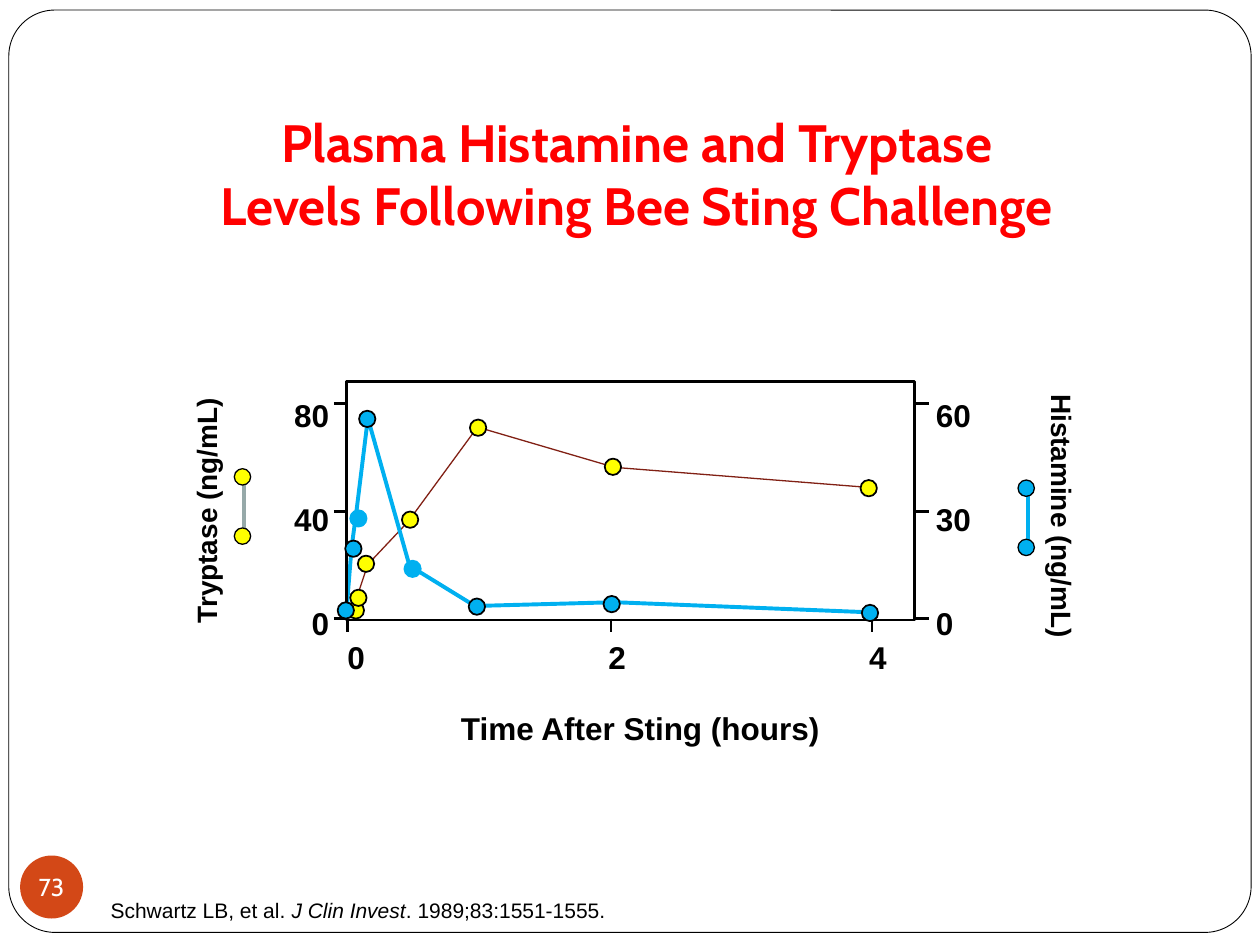
from lxml.etree import SubElement
from pptx import Presentation
from pptx.dml.color import RGBColor
from pptx.enum.shapes import MSO_CONNECTOR, MSO_SHAPE
from pptx.enum.text import MSO_ANCHOR, MSO_AUTO_SIZE, PP_ALIGN
from pptx.oxml.ns import qn
from pptx.util import Emu, Pt

PX = 9144
DOT = 13
TAB = 69
COLORS = {
    "white": "FFFFFF", "black": "000000", "title": "FF0000", "badge": "D34817",
    "tryptase": "FFFF00", "tryptase_line": "812014", "tryptase_key": "96A9A9",
    "histamine": "00B0F0",
}
TRYPTASE_LINE = [(6, 183), (8, 172), (17, 145), (49, 111), (104, 36), (213, 68), (416, 84)]
TRYPTASE_DOTS = [(1, 175), (3, 165), (9, 138), (44, 103), (98, 30), (205, 61), (408, 78)]
HISTAMINE_LINE = [(0, 182), (4, 132), (8, 102), (17, 29), (50, 146), (102, 178), (213, 175), (415, 183)]
HISTAMINE_DOTS = [(-7, 175), (-1, 126), (10, 23), (97, 172), (204, 170), (409, 177)]
HISTAMINE_PLAIN_DOTS = [(3, 102), (46, 142)]


def px(*lengths):
    """Turn whole px lengths into EMU."""
    return [Emu(length * PX) for length in lengths]


def rgb(name):
    """Look up a named colour."""
    return RGBColor.from_string(COLORS[name])


def style_shape(shape, fill=None, line=None, width=1):
    """Set fill and line, and drop the shadow."""
    shape.shadow.inherit = False
    if fill:
        shape.fill.solid()
        shape.fill.fore_color.rgb = rgb(fill)
    else:
        shape.fill.background()
    if line:
        shape.line.color.rgb = rgb(line)
        shape.line.width = Pt(width)
    else:
        shape.line.fill.background()


def add_figure(slide, preset, box, fill=None, line=None, width=1):
    """Add a styled preset shape."""
    shape = slide.shapes.add_shape(preset, *px(*box))
    style_shape(shape, fill, line, width)
    return shape


def add_dots(slide, left, top, places, fill, line="black", width=1):
    """Add round markers at places relative to a corner."""
    for x, y in places:
        add_figure(slide, MSO_SHAPE.OVAL, (left + x, top + y, DOT, DOT), fill, line, width)


def add_line(slide, start, end, color="black", width=1.5):
    """Add a straight line without a shadow."""
    connector = slide.shapes.add_connector(MSO_CONNECTOR.STRAIGHT, *px(*start, *end))
    connector.line.color.rgb = rgb(color)
    connector.line.width = Pt(width)
    SubElement(connector._element.spPr, qn("a:effectLst"))


def add_curve(slide, left, top, points, color, width):
    """Add an open line through points relative to a corner."""
    start, *rest = [(left + x, top + y) for x, y in points]
    builder = slide.shapes.build_freeform(*start, scale=PX)
    builder.add_line_segments(rest, close=False)
    style_shape(builder.convert_to_shape(), None, color, width)


def format_text(frame, size, font="Arial", color="black", bold=False, align=PP_ALIGN.LEFT, spacing=None):
    """Format every paragraph and run of a text frame."""
    for paragraph in frame.paragraphs:
        paragraph.alignment = align
        if spacing:
            paragraph.line_spacing = spacing
        for run in paragraph.runs:
            run.font.size, run.font.name, run.font.bold = Pt(size), font, bold
            run.font.color.rgb = rgb(color)


def add_text(slide, box, text, size, wrap=True, grow=True, rotation=0, bold=True, **style):
    """Add a formatted text box."""
    shape = slide.shapes.add_textbox(*px(*box))
    shape.rotation = rotation
    frame = shape.text_frame
    frame.text = text
    frame.word_wrap = wrap
    frame.auto_size = MSO_AUTO_SIZE.SHAPE_TO_FIT_TEXT if grow else MSO_AUTO_SIZE.NONE
    format_text(frame, size, bold=bold, **style)
    return frame


def draw_title(slide, box):
    """Draw the two-line heading."""
    text = "Plasma Histamine and Tryptase\vLevels Following Bee Sting Challenge"
    frame = add_text(slide, box, text, 30, grow=False, font="Cabin", color="title", align=PP_ALIGN.CENTER)
    frame.vertical_anchor = MSO_ANCHOR.BOTTOM
    frame.margin_bottom = Emu(10 * PX)


def draw_badge(slide, box):
    """Draw the round slide number."""
    frame = add_figure(slide, MSO_SHAPE.OVAL, box, "badge").text_frame
    frame.text = "73"
    frame.word_wrap = False
    frame.vertical_anchor = MSO_ANCHOR.MIDDLE
    frame.margin_left = frame.margin_right = frame.margin_top = frame.margin_bottom = 0
    format_text(frame, 14, "Cabin", "white", align=PP_ALIGN.CENTER)


def draw_citation(slide, box):
    """Draw the source line with its journal in italics."""
    frame = add_text(slide, box, "Schwartz LB, et al. ", 12, bold=False)
    paragraph = frame.paragraphs[0]
    paragraph.add_run().text = "J Clin Invest"
    paragraph.add_run().text = ". 1989;83:1551-1555."
    paragraph.runs[1].font.italic = True
    format_text(frame, 12)
    frame.vertical_anchor = MSO_ANCHOR.BOTTOM
    frame.margin_top = frame.margin_bottom = Emu(10 * PX)


def draw_axis_labels(slide, left, top):
    """Draw the numbers on the three axes and the time caption."""
    frame = add_text(slide, (left - 9, top + 203, 534, 36), "0\t\t\t2\t\t\t4", 18, spacing=0.85)
    tabs = SubElement(frame.paragraphs[0]._p.get_or_add_pPr(), qn("a:tabLst"))
    for step in range(1, 7):
        SubElement(tabs, qn("a:tab"), pos=str(step * TAB * PX), algn="l")
    scales = [(-52, "80\n40\n0", PP_ALIGN.RIGHT), (458, "60\n30\n0", PP_ALIGN.LEFT)]
    for x, text, align in scales:
        add_text(slide, (left + x, top - 46, 48, 245), text, 18, wrap=False, align=align, spacing=2.75)
    add_text(slide, (left + 81, top + 255, 308, 40), "Time After Sting (hours)", 18, wrap=False)


def draw_plot(slide, box):
    """Draw the frame, ticks, curves and markers."""
    left, top, width, height = box
    add_curve(slide, left, top, TRYPTASE_LINE, "tryptase_line", 0.75)
    add_curve(slide, left, top, HISTAMINE_LINE, "histamine", 2.25)
    draw_axis_labels(slide, left, top)
    add_figure(slide, MSO_SHAPE.RECTANGLE, box, None, "black", 1.5)
    for y in (top + 17, top + 103, top + 188):
        for x in (left - 10, left + width + 1):
            add_line(slide, (x, y), (x + 10, y))
    for x in (left + 1, left + 210, left + 417):
        add_line(slide, (x, top + height - 1), (x, top + height + 10))
    add_dots(slide, left, top, TRYPTASE_DOTS, "tryptase")
    add_dots(slide, left, top, HISTAMINE_DOTS, "histamine")
    add_dots(slide, left, top, HISTAMINE_PLAIN_DOTS, "histamine", "histamine")


def draw_key(slide, left, top, fill, line, caption, caption_box, rotation):
    """Draw a vertical series key with its turned caption."""
    x, y, width, height = caption_box
    add_line(slide, (left + 8, top + 9), (left + 8, top + 51), line, 2.25)
    add_dots(slide, left, top, [(0, 0), (0, 47)], fill, width=0.75)
    add_text(slide, (left + x, top + y, width, height), caption, 16,
             wrap=False, rotation=rotation, spacing=1.25)


def main():
    """Build and save the slide."""
    presentation = Presentation()
    presentation.slide_width, presentation.slide_height = px(1000, 750)
    slide = presentation.slides.add_slide(presentation.slide_layouts[6])
    border = add_figure(slide, MSO_SHAPE.ROUNDED_RECTANGLE, (7, 8, 986, 732), "white", "black", 0.5)
    border.adjustments[0] = 0.05
    draw_title(slide, (61, 30, 889, 167))
    draw_badge(slide, (16, 679, 50, 50))
    draw_citation(slide, (78, 702, 434, 40))
    draw_plot(slide, (275, 303, 451, 189))
    draw_key(slide, 186, 372, "tryptase", "tryptase_key", "Tryptase (ng/mL)", (-128, 12, 201, 40), 270)
    draw_key(slide, 808, 381, "histamine", "histamine", "Histamine (ng/mL)", (-68, 10, 216, 40), 90)
    presentation.save("out.pptx")


if __name__ == "__main__":
    main()
